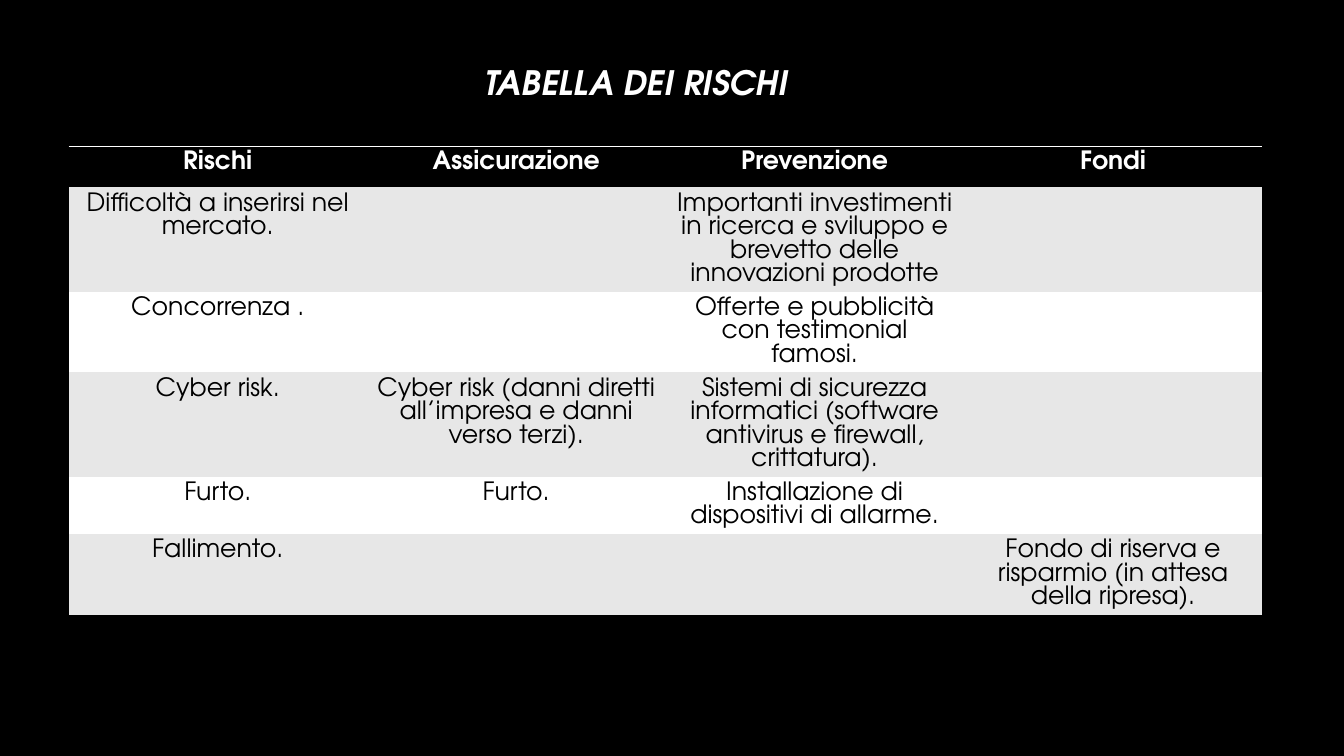
from lxml.etree import SubElement
from pptx import Presentation
from pptx.dml.color import RGBColor
from pptx.enum.text import MSO_ANCHOR, PP_ALIGN
from pptx.oxml.ns import qn
from pptx.util import Inches, Pt

FONT = "TeX Gyre Adventor"
BLACK, WHITE, GREY = "000000", "FFFFFF", "E7E7E7"
PLAIN_TABLE_STYLE = "{2D5ABB26-0587-4C30-8999-92F81FD0307C}"
COLUMN_WIDTH, ROW_HEIGHT = 2.96, 0.41

RISKS = [
    ["Rischi", "Assicurazione", "Prevenzione", "Fondi"],
    ["Difficoltà a inserirsi nel mercato.", "",
     "Importanti investimenti in ricerca e sviluppo e brevetto delle innovazioni prodotte", ""],
    ["Concorrenza .", "", "Offerte e pubblicità con testimonial famosi.", ""],
    ["Cyber risk.", "Cyber risk (danni diretti all’impresa e danni verso terzi).",
     "Sistemi di sicurezza informatici (software antivirus e firewall, crittatura).", ""],
    ["Furto.", "Furto.", "Installazione di dispositivi di allarme.", ""],
    ["Fallimento.", "", "", "Fondo di riserva e risparmio (in attesa della ripresa)."],
]


def paint(fill, color):
    fill.solid()
    fill.fore_color.rgb = RGBColor.from_string(color)


def write(text_frame, text, size, color, bold=False, italic=False):
    paragraph = text_frame.paragraphs[0]
    paragraph.text = text
    paragraph.alignment = PP_ALIGN.CENTER
    font = paragraph.font
    font.name, font.size = FONT, Pt(size)
    font.bold, font.italic = bold, italic
    font.color.rgb = RGBColor.from_string(color)


def add_top_border(cell, color):
    """Draw a 1 pt line on top; the border must precede the fill in tcPr."""
    properties = cell._tc.get_or_add_tcPr()
    border = SubElement(properties, qn("a:lnT"), w=str(Pt(1)))
    properties.insert(0, border)
    line_fill = SubElement(border, qn("a:solidFill"))
    SubElement(line_fill, qn("a:srgbClr"), val=color)


def add_title(slide, text):
    title = slide.shapes.add_textbox(Inches(1.09), Inches(0.56), Inches(10.44), Inches(0.5))
    title.text_frame.word_wrap = True
    title.text_frame.vertical_anchor = MSO_ANCHOR.BOTTOM
    write(title.text_frame, text, 24, WHITE, bold=True, italic=True)


def add_risk_table(slide, rows):
    row_count, column_count = len(rows), len(rows[0])
    frame = slide.shapes.add_table(
        row_count, column_count, Inches(0.68), Inches(1.45),
        Inches(COLUMN_WIDTH * column_count), Inches(ROW_HEIGHT * row_count))
    table = frame.table
    table._tbl.tblPr.find(qn("a:tableStyleId")).text = PLAIN_TABLE_STYLE
    for row_index, row in enumerate(rows):
        is_header = row_index == 0
        band = BLACK if is_header else GREY if row_index % 2 else WHITE
        for column_index, text in enumerate(row):
            cell = table.cell(row_index, column_index)
            paint(cell.fill, band)
            write(cell.text_frame, text, 18, WHITE if is_header else BLACK, bold=is_header)
            if is_header:
                add_top_border(cell, WHITE)


def main():
    presentation = Presentation()
    presentation.slide_width, presentation.slide_height = Inches(13.33), Inches(7.5)
    slide = presentation.slides.add_slide(presentation.slide_layouts[6])
    paint(slide.background.fill, BLACK)
    add_risk_table(slide, RISKS)
    add_title(slide, "TABELLA DEI RISCHI")
    presentation.save("out.pptx")


if __name__ == "__main__":
    main()
